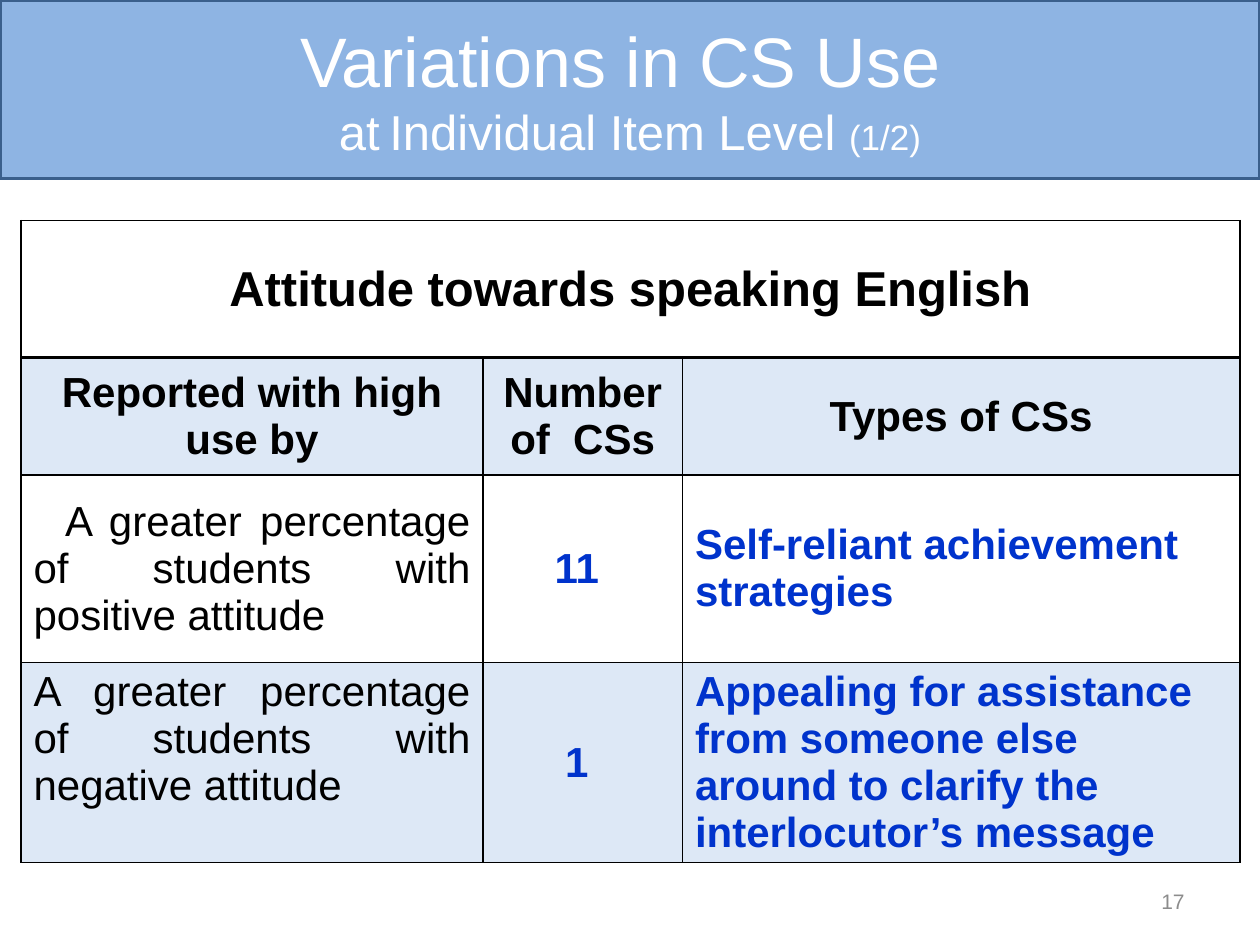
from dataclasses import dataclass

from lxml import etree
from pptx import Presentation
from pptx.dml.color import RGBColor
from pptx.enum.text import MSO_ANCHOR, PP_ALIGN
from pptx.oxml.ns import qn
from pptx.util import Pt

LEFT, CENTER = PP_ALIGN.LEFT, PP_ALIGN.CENTER
RIGHT, JUSTIFY = PP_ALIGN.RIGHT, PP_ALIGN.JUSTIFY
TOP, MIDDLE = MSO_ANCHOR.TOP, MSO_ANCHOR.MIDDLE
TITLE_ONLY = 5


@dataclass(frozen=True)
class Theme:
    font: str = "Arial"
    banner: str = "8EB4E3"
    banner_line: str = "3A5F8C"
    white: str = "FFFFFF"
    black: str = "000000"
    blue: str = "0033CC"
    band: str = "558ED5"
    band_opacity: int = 20
    gray: str = "8C8C8C"
    title_size: int = 40
    heading_size: int = 28
    body_size: int = 24
    small_size: int = 20
    number_size: int = 12


THEME = Theme()
COLUMN_WIDTHS = (264, 114, 318.5)
ROW_HEIGHTS = (78.5, 67, 107, 114.5)


def style_run(run, size, color, bold=False):
    run.font.name = THEME.font
    run.font.size = Pt(size)
    run.font.bold = bold
    run.font.color.rgb = RGBColor.from_string(color)


def style_text(frame, size, color, bold=False, align=LEFT):
    for para in frame.paragraphs:
        para.alignment = align
        for run in para.runs:
            style_run(run, size, color, bold)


def add_banner(page):
    title = page.shapes.title
    title.left, title.top, title.width, title.height = Pt(0), Pt(0), Pt(720), Pt(102)
    title.fill.solid()
    title.fill.fore_color.rgb = RGBColor.from_string(THEME.banner)
    title.line.color.rgb = RGBColor.from_string(THEME.banner_line)
    title.line.width = Pt(2)
    title.text_frame.vertical_anchor = MIDDLE

    para = title.text_frame.paragraphs[0]
    para.alignment = CENTER
    lines = (
        (("Variations in CS Use ", THEME.title_size),),
        (("at", THEME.heading_size), (" ", THEME.small_size),
         ("Individual Item Level ", THEME.heading_size), ("(1/2)", THEME.small_size)),
    )
    for number, line in enumerate(lines):
        if number:
            para.add_line_break()
        for text, size in line:
            run = para.add_run()
            run.text = text
            style_run(run, size, THEME.white)


def set_borders(cell, bottom=1, top=1):
    properties = cell._tc.get_or_add_tcPr()
    for side, width in (("L", 1), ("R", 1), ("T", top), ("B", bottom)):
        line = etree.SubElement(properties, qn(f"a:ln{side}"), w=str(Pt(width)))
        fill = etree.SubElement(line, qn("a:solidFill"))
        etree.SubElement(fill, qn("a:srgbClr"), val=THEME.black)


def fill_cell(cell, banded):
    if not banded:
        cell.fill.background()
        return
    cell.fill.solid()
    cell.fill.fore_color.rgb = RGBColor.from_string(THEME.band)
    color = cell._tc.tcPr.find(f"{qn('a:solidFill')}/{qn('a:srgbClr')}")
    etree.SubElement(color, qn("a:alpha"), val=str(THEME.band_opacity * 1000))


def write_cell(cell, text, align, size=THEME.body_size, color=THEME.black, bold=True):
    cell.text_frame.text = text
    cell.vertical_anchor = MIDDLE
    style_text(cell.text_frame, size, color, bold, align)


def add_strategy_table(page):
    frame = page.shapes.add_table(
        len(ROW_HEIGHTS), len(COLUMN_WIDTHS), Pt(12), Pt(126),
        Pt(sum(COLUMN_WIDTHS)), Pt(sum(ROW_HEIGHTS)))
    table = frame.table
    table.first_row = table.horz_banding = False
    for column, width in zip(table.columns, COLUMN_WIDTHS):
        column.width = Pt(width)
    for index, (row, height) in enumerate(zip(table.rows, ROW_HEIGHTS)):
        row.height = Pt(height)
        for cell in row.cells:
            set_borders(cell, bottom=2 if index == 0 else 1, top=2 if index == 1 else 1)
            fill_cell(cell, banded=index % 2 == 1)

    # Heading across all columns
    heading = table.cell(0, 0)
    heading.merge(table.cell(0, 2))
    write_cell(heading, "Attitude towards speaking English", CENTER, THEME.heading_size)

    # Column headings
    labels = ("Reported with high use by", "Number of  CSs", "Types of CSs")
    for column, label in enumerate(labels):
        write_cell(table.cell(1, column), label, CENTER)

    # Findings
    findings = (
        ("A greater percentage of students with positive attitude", "11 ",
         "Self-reliant achievement\nstrategies"),
        ("A greater percentage of students with negative attitude", "1 ",
         "Appealing for assistance from someone else around to clarify "
         "the interlocutor’s message"),
    )
    for row, (group, count, kinds) in enumerate(findings, start=2):
        write_cell(table.cell(row, 0), group, JUSTIFY, bold=False)
        write_cell(table.cell(row, 1), count, CENTER, color=THEME.blue)
        write_cell(table.cell(row, 2), kinds, LEFT, color=THEME.blue)

    # First group starts indented, second group sits at the top
    first_group = table.cell(2, 0).text_frame.paragraphs[0]
    first_group._p.get_or_add_pPr().set("indent", str(Pt(18)))
    table.cell(3, 0).vertical_anchor = TOP


def add_page_number(page):
    box = page.shapes.add_textbox(Pt(516), Pt(500.5), Pt(168), Pt(29))
    box.text_frame.word_wrap = True
    box.text_frame.vertical_anchor = MIDDLE
    box.text_frame.text = "17"
    style_text(box.text_frame, THEME.number_size, THEME.gray, align=RIGHT)


def main():
    deck = Presentation()
    deck.slide_width, deck.slide_height = Pt(720), Pt(540)
    page = deck.slides.add_slide(deck.slide_layouts[TITLE_ONLY])
    add_banner(page)
    add_strategy_table(page)
    add_page_number(page)
    deck.save("out.pptx")


if __name__ == "__main__":
    main()
